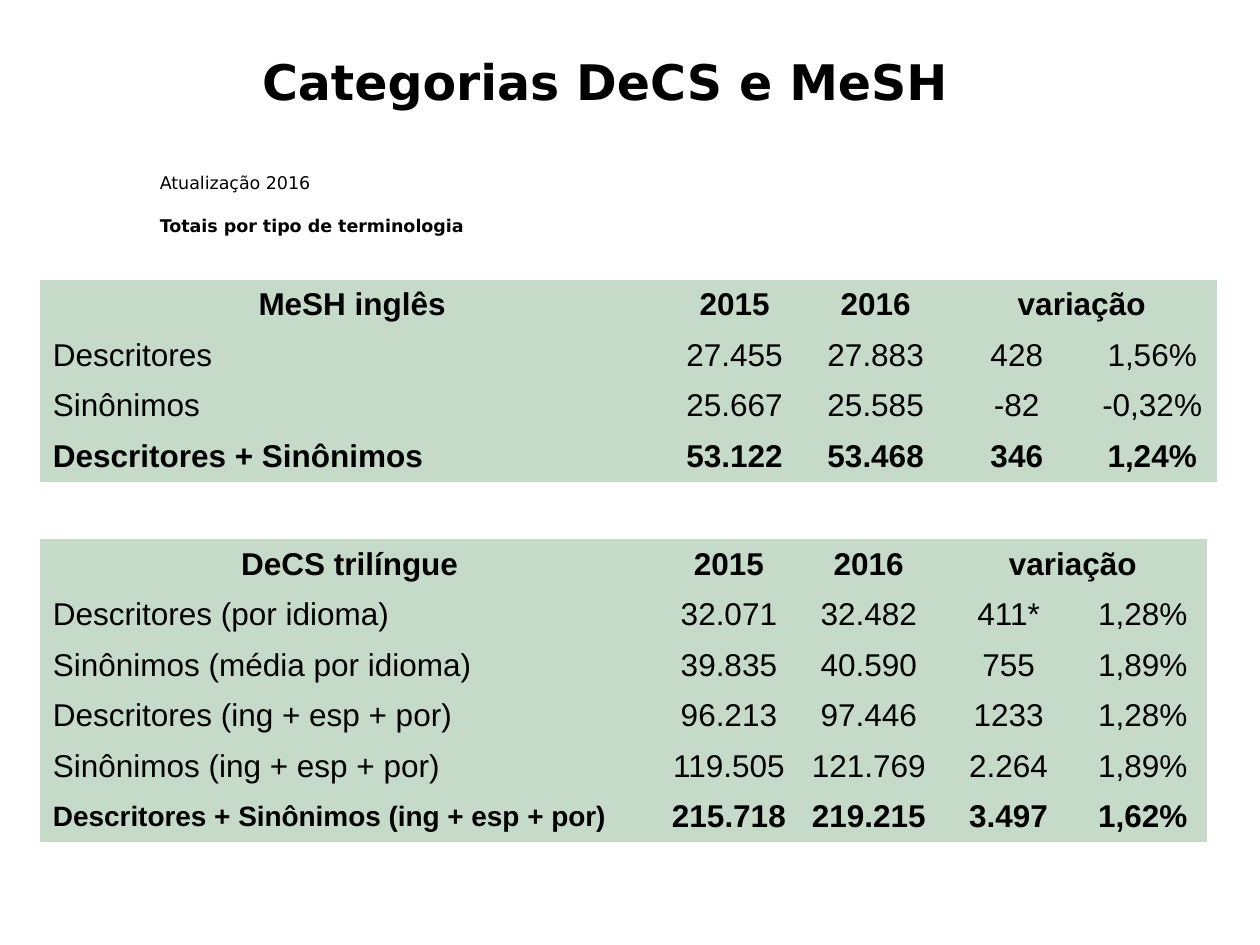
from dataclasses import dataclass

import pptx
import pptx.dml.color
import pptx.enum.text
import pptx.oxml.ns
import pptx.util
from pptx.util import Inches

ALIGN = pptx.enum.text.PP_ALIGN
ANCHOR = pptx.enum.text.MSO_ANCHOR
NO_GRID_STYLE = "{2D5ABB26-0587-4C30-8999-92F81FD0307C}"


@dataclass(frozen=True)
class Theme:
    text: str = "000000"
    cell: str = "C6DAC9"
    heading_font: str = "DejaVu Sans"
    table_font: str = "Arial"
    title_size: int = 28
    note_size: int = 10
    table_size: int = 18
    long_label_size: int = 16


@dataclass(frozen=True)
class Terminology:
    top: float
    column_widths: tuple[float, ...]
    name: str
    rows: tuple[tuple[str, ...], ...]
    total_label_size: int


THEME = Theme()
TABLE_LEFT = 0.32
ROW_HEIGHT = 0.4

TERMINOLOGIES = (
    Terminology(
        2.22, (4.95, 1.12, 1.12, 1.12, 1.03), "MeSH inglês",
        (
            ("Descritores", "27.455", "27.883", "428", "1,56%"),
            ("Sinônimos", "25.667", "25.585", "-82", "-0,32%"),
            ("Descritores + Sinônimos", "53.122", "53.468", "346", "1,24%"),
        ),
        THEME.table_size,
    ),
    Terminology(
        4.28, (4.91, 1.11, 1.11, 1.11, 1.02), "DeCS trilíngue",
        (
            ("Descritores (por idioma)", "32.071", "32.482", "411*", "1,28%"),
            ("Sinônimos (média por idioma)", "39.835", "40.590", "755", "1,89%"),
            ("Descritores (ing + esp + por)", "96.213", "97.446", "1233", "1,28%"),
            ("Sinônimos (ing + esp + por)", "119.505", "121.769", "2.264", "1,89%"),
            ("Descritores + Sinônimos (ing + esp + por)",
             "215.718", "219.215", "3.497", "1,62%"),
        ),
        THEME.long_label_size,
    ),
)


def add_run(paragraph, text: str, font_name: str, size: int, bold: bool) -> None:
    run = paragraph.add_run()
    run.text = text
    run.font.name = font_name
    run.font.size = pptx.util.Pt(size)
    run.font.bold = bold
    run.font.color.rgb = pptx.dml.color.RGBColor.from_string(THEME.text)


def add_title(slide, text: str) -> None:
    title = slide.shapes.title
    title.left, title.top = Inches(1.06), Inches(0.36)
    title.width, title.height = Inches(7.48), Inches(0.57)
    frame = title.text_frame
    frame.auto_size = pptx.enum.text.MSO_AUTO_SIZE.NONE
    frame.vertical_anchor = ANCHOR.MIDDLE
    frame.paragraphs[0].alignment = ALIGN.CENTER
    add_run(frame.paragraphs[0], text, THEME.heading_font, THEME.title_size, True)


def add_update_note(slide, update: str, subject: str) -> None:
    note = slide.shapes.add_textbox(Inches(1.17), Inches(1.32), Inches(8.5), Inches(0.6))
    frame = note.text_frame
    frame.word_wrap = True
    first = frame.paragraphs[0]
    first.space_after = pptx.util.Pt(12)
    add_run(first, update, THEME.heading_font, THEME.note_size, False)
    add_run(frame.add_paragraph(), subject, THEME.heading_font, THEME.note_size, True)


def fill_cell(cell, text: str, size: int, bold: bool, centred: bool) -> None:
    cell.fill.solid()
    cell.fill.fore_color.rgb = pptx.dml.color.RGBColor.from_string(THEME.cell)
    cell.vertical_anchor = ANCHOR.MIDDLE
    if text:
        paragraph = cell.text_frame.paragraphs[0]
        paragraph.alignment = ALIGN.CENTER if centred else ALIGN.LEFT
        add_run(paragraph, text, THEME.table_font, size, bold)


def add_terminology_table(slide, terminology: Terminology) -> None:
    """Draw yearly counts; the last two columns share the heading 'variação'."""
    header = (terminology.name, "2015", "2016", "variação", "")
    rows = (header, *terminology.rows)
    widths = terminology.column_widths
    table = slide.shapes.add_table(
        len(rows), len(widths), Inches(TABLE_LEFT), Inches(terminology.top),
        Inches(sum(widths)), Inches(ROW_HEIGHT * len(rows)),
    ).table
    table.first_row = table.horz_banding = False
    table._tbl.tblPr.find(pptx.oxml.ns.qn("a:tableStyleId")).text = NO_GRID_STYLE
    for column, width in zip(table.columns, widths):
        column.width = Inches(width)
    table.cell(0, 3).merge(table.cell(0, 4))

    last = len(rows) - 1
    for r, row in enumerate(rows):
        table.rows[r].height = Inches(ROW_HEIGHT)
        for c, text in enumerate(row):
            is_total_label = r == last and c == 0
            size = terminology.total_label_size if is_total_label else THEME.table_size
            fill_cell(table.cell(r, c), text, size,
                      bold=r in (0, last), centred=r == 0 or c > 0)


def main() -> None:
    presentation = pptx.Presentation()
    presentation.slide_width, presentation.slide_height = Inches(10), Inches(7.5)
    slide = presentation.slides.add_slide(presentation.slide_layouts.get_by_name("Title Only"))
    add_title(slide, "Categorias DeCS e MeSH")
    add_update_note(slide, "Atualização 2016", "Totais por tipo de terminologia")
    for terminology in TERMINOLOGIES:
        add_terminology_table(slide, terminology)
    presentation.save("out.pptx")


if __name__ == "__main__":
    main()
